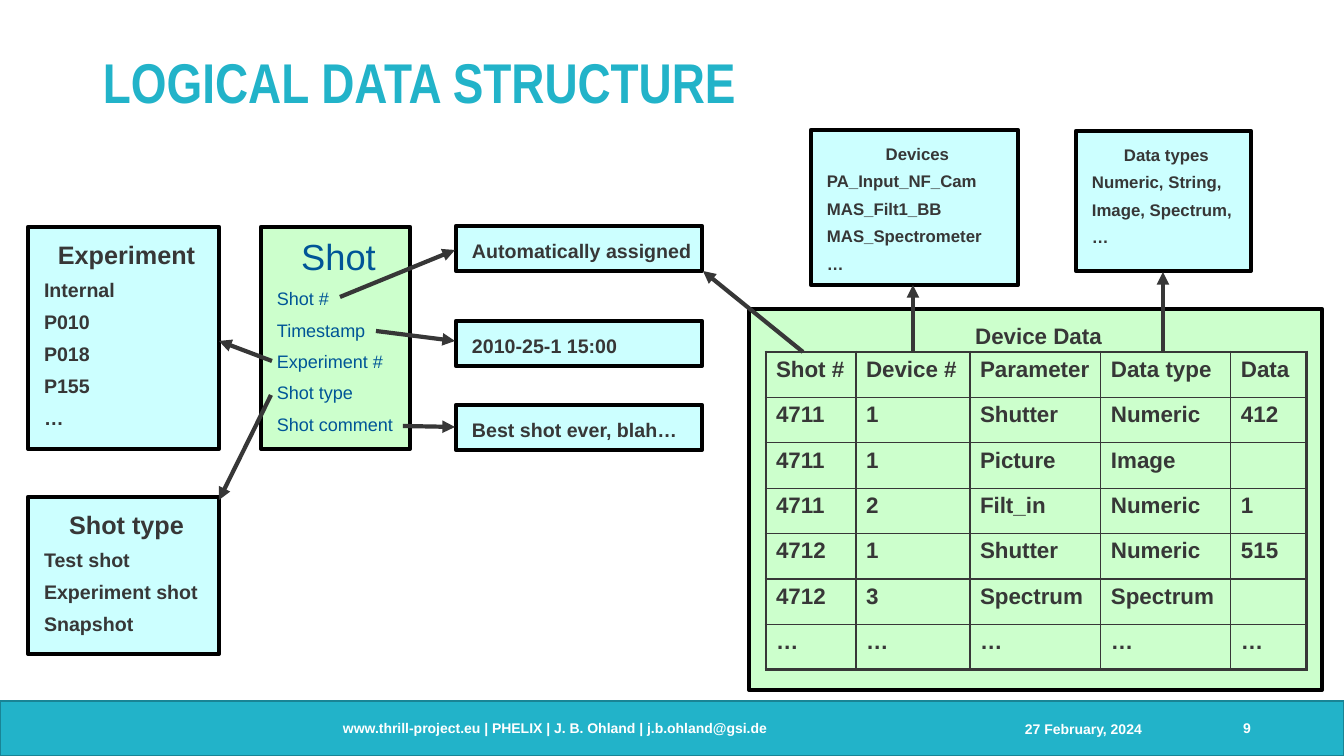
"""Builds the slide on the logical data structure of shots and devices."""
from pptx import Presentation
from pptx.dml.color import RGBColor
from pptx.enum.shapes import MSO_CONNECTOR, MSO_SHAPE
from pptx.enum.text import MSO_ANCHOR, PP_ALIGN
from pptx.oxml import parse_xml
from pptx.oxml.ns import nsdecls
from pptx.util import Pt

SCALE = 914400 / 100.8
SLIDE_SIZE = (1344, 756)
INK, BLUE, TEAL, WHITE, BLACK = "373737", "005597", "22B3C9", "FFFFFF", "000000"
CYAN, GREEN = "CCFFFF", "CCFFCC"
INSETS = (16, 16, 10, 5)

FOOTER_BAR = (0, 701, 1344, 55)
LABELS = [
    ("LOGICAL DATA STRUCTURE", (93, 40, 1159, 90), (10, 5, 10, 5),
     "Arial Narrow", 40, TEAL, PP_ALIGN.LEFT, 0.9),
    ("www.thrill-project.eu | PHELIX | J. B. Ohland | j.b.ohland@gsi.de",
     (343, 708, 592, 40), (0, 5, 10, 5), "Arial", 10, WHITE, PP_ALIGN.LEFT, 1.0),
    ("27 February, 2024", (1015, 709, 148, 40), (10, 5, 10, 5),
     "Arial", 10, WHITE, PP_ALIGN.LEFT, 1.0),
    ("9", (1196, 708, 55, 40), (10, 5, 0, 5), "Arial", 10, WHITE, PP_ALIGN.RIGHT, 1.0),
]

SHOT = ("Shot", ["Shot #", "Timestamp", "Experiment #", "Shot type", "Shot comment"])
SHOT_AREA = (261, 227, 149, 222)
BOXES = [
    ("Shot type", 18, ["Test shot", "Experiment shot", "Snapshot"], 14,
     (28, 497, 191, 157), CYAN),
    ("Experiment", 18, ["Internal", "P010", "P018", "P155", "…"], 14,
     (28, 227, 191, 222), CYAN),
    ("Device Data", 16, [], 16, (749, 309, 573, 381), GREEN),
    ("Data types", 12, ["Numeric, String,", "Image, Spectrum,", "…"], 12,
     (1076, 131, 175, 140), CYAN),
    ("Devices", 12, ["PA_Input_NF_Cam", "MAS_Filt1_BB", "MAS_Spectrometer", "…"], 12,
     (811, 130, 207, 155), CYAN),
    ("", 14, ["Automatically assigned"], 14, (456, 226, 246, 45), CYAN),
    ("", 14, ["2010-25-1 15:00"], 14, (456, 321, 246, 45), CYAN),
    ("", 14, ["Best shot ever, blah…"], 14, (456, 405, 246, 45), CYAN),
]

DEVICE_AREA = (766, 352, 541, 318)
DEVICE_COLUMNS = [90, 114, 131, 130, 76]
DEVICE_ROWS = [
    ["Shot #", "Device #", "Parameter", "Data type", "Data"],
    ["4711", "1", "Shutter", "Numeric", "412"],
    ["4711", "1", "Picture", "Image", ""],
    ["4711", "2", "Filt_in", "Numeric", "1"],
    ["4712", "1", "Shutter", "Numeric", "515"],
    ["4712", "3", "Spectrum", "Spectrum", ""],
    ["…"] * 5,
]

ARROWS = [
    (272, 361, 219, 341), (271, 395, 219, 500), (376, 331, 455, 341),
    (403, 426, 455, 427), (340, 297, 455, 250), (913, 352, 913, 285),
    (1163, 352, 1163, 272), (803, 352, 703, 271),
]


def px(length):
    return round(length * SCALE)


def emu(area):
    return [px(length) for length in area]


def color(hex_string):
    return RGBColor.from_string(hex_string)


def style_font(font, name, size, hex_string, bold):
    font.name, font.size, font.bold = name, Pt(size), bold
    font.color.rgb = color(hex_string)


def set_insets(frame, insets):
    frame.word_wrap = True
    (frame.margin_left, frame.margin_top,
     frame.margin_right, frame.margin_bottom) = emu(insets)


def add_rect(slide, area, fill, line, width):
    rect = slide.shapes.add_shape(MSO_SHAPE.RECTANGLE, *emu(area))
    rect.shadow.inherit = False
    rect.fill.solid()
    rect.fill.fore_color.rgb = color(fill)
    rect.line.color.rgb = color(line)
    rect.line.width = Pt(width)
    return rect


def add_label(slide, text, area, insets, name, size, hex_string, align, spacing):
    frame = slide.shapes.add_textbox(*emu(area)).text_frame
    set_insets(frame, insets)
    frame.vertical_anchor = MSO_ANCHOR.MIDDLE
    frame.text = text
    line = frame.paragraphs[0]
    line.alignment, line.line_spacing = align, spacing
    style_font(line.runs[0].font, name, size, hex_string, True)


def add_box(slide, heading, heading_size, items, item_size, area, fill,
            ink=INK, bold=True, spacing=0.9, gap=None, hang=38):
    frame = add_rect(slide, area, fill, BLACK, 3).text_frame
    set_insets(frame, INSETS)
    frame.vertical_anchor = MSO_ANCHOR.TOP
    lines = [(heading, heading_size, PP_ALIGN.CENTER)] if heading else []
    lines += [(item, item_size, PP_ALIGN.LEFT) for item in items]
    frame.text = "\n".join(text for text, _, _ in lines)
    for index, (line, (_, size, align)) in enumerate(zip(frame.paragraphs, lines)):
        line.alignment, line.line_spacing = align, spacing
        if index:
            line.space_before = Pt(gap or round(size * 0.55, 1))
        properties = line._p.get_or_add_pPr()
        properties.set("marL", str(px(hang)))
        properties.set("indent", str(-px(hang)))
        style_font(line.runs[0].font, "Arial", size, ink, bold)


def add_border(cell, side, width):
    cell._tc.get_or_add_tcPr().append(parse_xml(
        f'<a:ln{side} {nsdecls("a")} w="{Pt(width)}"><a:solidFill>'
        f'<a:srgbClr val="{INK}"/></a:solidFill></a:ln{side}>'))


def add_device_table(slide):
    last_row, last_column = len(DEVICE_ROWS) - 1, len(DEVICE_COLUMNS) - 1
    table = slide.shapes.add_table(
        last_row + 1, last_column + 1, *emu(DEVICE_AREA)).table
    table.first_row = table.horz_banding = False
    for column, width in zip(table.columns, DEVICE_COLUMNS):
        column.width = px(width)
    for r, values in enumerate(DEVICE_ROWS):
        table.rows[r].height = px(DEVICE_AREA[3] / len(DEVICE_ROWS))
        for c, value in enumerate(values):
            cell = table.cell(r, c)
            cell.text = value
            for run in cell.text_frame.paragraphs[0].runs:
                style_font(run.font, "Arial", 16, INK, True)
            outer = {"L": c == 0, "R": c == last_column, "T": r == 0, "B": r == last_row}
            for side, is_outer in outer.items():
                add_border(cell, side, 2.25 if is_outer else 1)
            cell.fill.background()


def add_arrow(slide, ends):
    arrow = slide.shapes.add_connector(MSO_CONNECTOR.STRAIGHT, *emu(ends))
    arrow.line.color.rgb = color(INK)
    arrow.line.width = Pt(3)
    arrow.line._get_or_add_ln().append(
        parse_xml(f'<a:tailEnd {nsdecls("a")} type="triangle"/>'))
    arrow._element.spPr.append(parse_xml(f'<a:effectLst {nsdecls("a")}/>'))


def main():
    deck = Presentation()
    deck.slide_width, deck.slide_height = emu(SLIDE_SIZE)
    slide = deck.slides.add_slide(deck.slide_layouts[6])
    add_rect(slide, FOOTER_BAR, TEAL, "198495", 1)
    for label in LABELS:
        add_label(slide, *label)
    heading, fields = SHOT
    add_box(slide, heading, 25.9, fields, 12.9, SHOT_AREA, GREEN,
            ink=BLUE, bold=False, spacing=0.8, gap=10, hang=25)
    for box in BOXES:
        add_box(slide, *box)
    add_device_table(slide)
    for ends in ARROWS:
        add_arrow(slide, ends)
    deck.save("out.pptx")


if __name__ == "__main__":
    main()
